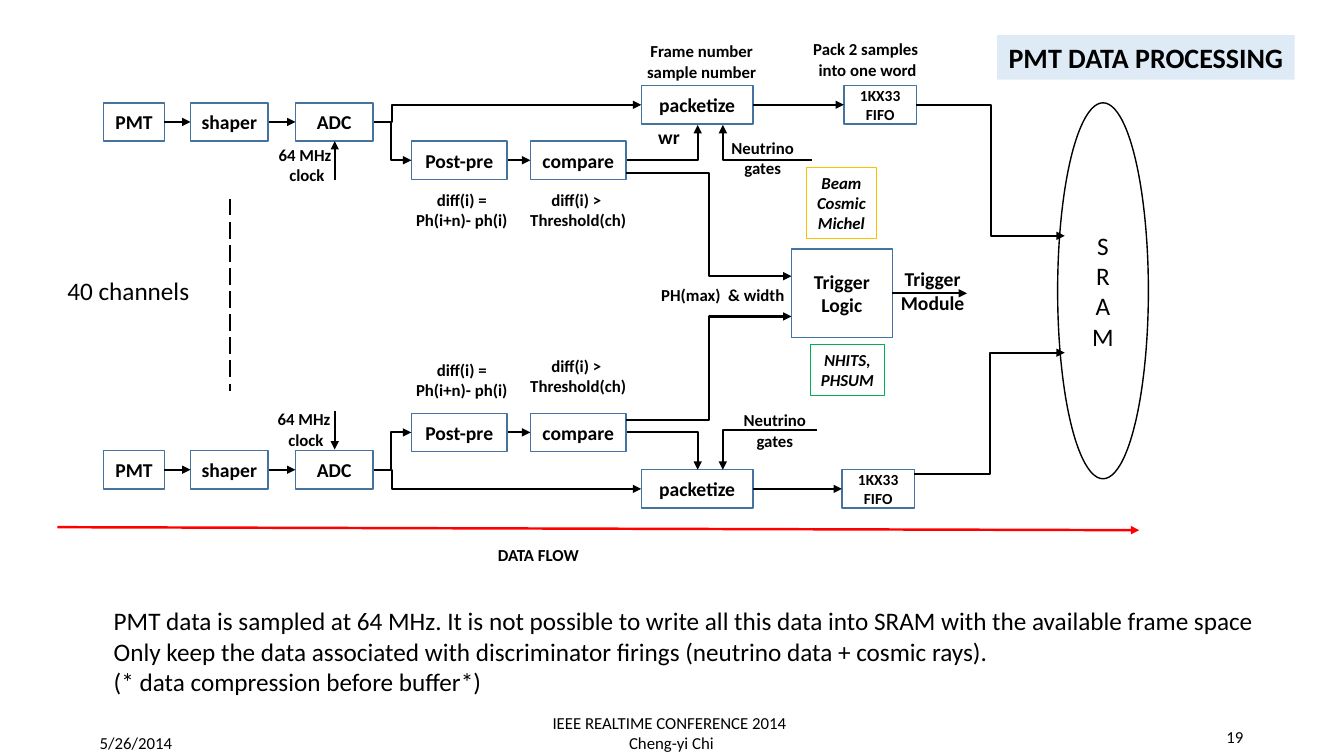
from dataclasses import dataclass
from typing import Optional

from lxml import etree
from pptx import Presentation
from pptx.dml.color import RGBColor
from pptx.enum.dml import MSO_LINE
from pptx.enum.shapes import MSO_CONNECTOR, MSO_SHAPE
from pptx.enum.text import MSO_ANCHOR, PP_ALIGN
from pptx.oxml.ns import qn
from pptx.util import Inches, Pt

RECT, ELLIPSE = MSO_SHAPE.RECTANGLE, MSO_SHAPE.OVAL
STRAIGHT, ELBOW = MSO_CONNECTOR.STRAIGHT, MSO_CONNECTOR.ELBOW
LEFT, CENTER, RIGHT = PP_ALIGN.LEFT, PP_ALIGN.CENTER, PP_ALIGN.RIGHT
TOP, MIDDLE = MSO_ANCHOR.TOP, MSO_ANCHOR.MIDDLE
LONG_DASH = MSO_LINE.LONG_DASH

BLACK = RGBColor(0x00, 0x00, 0x00)
WHITE = RGBColor(0xFF, 0xFF, 0xFF)
BLUE = RGBColor(0x43, 0x73, 0x9E)
PALE_BLUE = RGBColor(0xDE, 0xEB, 0xF7)
GREEN = RGBColor(0x00, 0xB0, 0x50)
GOLD = RGBColor(0xFF, 0xC0, 0x00)
RED = RGBColor(0xFF, 0x00, 0x00)

FONT = "Calibri"
BOX_H = 0.38


@dataclass
class Block:
    text: str
    x: float
    y: float
    w: float
    h: float = BOX_H
    size: float = 14
    bold: bool = True
    italic: bool = False
    line: Optional[RGBColor] = BLUE
    line_w: float = 1
    fill: Optional[RGBColor] = None
    shape: MSO_SHAPE = RECT
    anchor: MSO_ANCHOR = MIDDLE
    wrap: bool = True


@dataclass
class Label:
    text: str
    x: float
    y: float
    w: float
    h: float = 0.5
    size: float = 12
    bold: bool = True
    italic: bool = False
    align: PP_ALIGN = CENTER
    anchor: MSO_ANCHOR = TOP
    wrap: bool = False


@dataclass
class Wire:
    x1: float
    y1: float
    x2: float
    y2: float
    bend: Optional[float] = None  # share of the width; 1 turns a single corner
    color: RGBColor = BLACK
    width: float = 1.5
    dashed: bool = False


@dataclass
class Channel:
    """Heights of one processing chain."""
    adc: float
    post: float
    pack: float
    diff: float
    threshold: float
    clock_label: float
    clock_x: float
    clock_from: float
    clock_to: float
    to_trigger: float
    trigger_in: float
    pack_edge: float
    fifo_x: float
    fifo_out: float
    sram_in: float
    gates_x: float
    gates_y: float
    gate_line_x: float
    gate_line_y: float


def write(sp, item, align: PP_ALIGN) -> None:
    tf = sp.text_frame
    tf.text = item.text
    tf.word_wrap = item.wrap
    tf.vertical_anchor = item.anchor
    for p in tf.paragraphs:
        p.alignment = align
        p.font.name, p.font.size = FONT, Pt(item.size)
        p.font.bold, p.font.italic = item.bold, item.italic
        p.font.color.rgb = BLACK


def draw_block(s, b: Block) -> None:
    sp = s.shapes.add_shape(b.shape, Inches(b.x), Inches(b.y), Inches(b.w), Inches(b.h))
    sp.shadow.inherit = False
    if b.fill is None:
        sp.fill.background()
    else:
        sp.fill.solid()
        sp.fill.fore_color.rgb = b.fill
    if b.line is None:
        sp.line.fill.background()
    else:
        sp.line.color.rgb = b.line
        sp.line.width = Pt(b.line_w)
    write(sp, b, CENTER)


def draw_label(s, t: Label) -> None:
    sp = s.shapes.add_textbox(Inches(t.x), Inches(t.y), Inches(t.w), Inches(t.h))
    write(sp, t, t.align)


def draw_wire(s, w: Wire) -> None:
    kind = STRAIGHT if w.bend is None else ELBOW
    c = s.shapes.add_connector(kind, Inches(w.x1), Inches(w.y1), Inches(w.x2), Inches(w.y2))
    c.line.color.rgb = w.color
    c.line.width = Pt(w.width)
    sp_pr = c._element.spPr
    geom = sp_pr.find(qn("a:prstGeom"))
    if w.bend == 1:
        geom.set("prst", "bentConnector2")
    elif w.bend is not None:
        etree.SubElement(geom.find(qn("a:avLst")), qn("a:gd"),
                         name="adj1", fmla=f"val {round(w.bend * 100000)}")
    if w.dashed:
        c.line.dash_style = LONG_DASH
    else:
        etree.SubElement(sp_pr.find(qn("a:ln")), qn("a:tailEnd"), type="triangle")
    etree.SubElement(sp_pr, qn("a:effectLst"))


def draw_channel(s, ch: Channel) -> None:
    mid = BOX_H / 2
    adc, post, pack = ch.adc + mid, ch.post + mid, ch.pack + mid
    for b in (Block("PMT", 1.03, ch.adc, 0.6), Block("shaper", 1.89, ch.adc, 0.77),
              Block("ADC", 2.93, ch.adc, 0.77), Block("Post-pre", 4.08, ch.post, 0.95),
              Block("compare", 5.26, ch.post, 0.95), Block("packetize", 6.36, ch.pack, 1.11),
              Block("1KX33 FIFO", ch.fifo_x, ch.pack, 0.72, size=11)):
        draw_block(s, b)
    for t in (Label("diff(i) =\nPh(i+n)- ph(i)", 4.02, ch.diff, 1.12),
              Label("diff(i) > \nThreshold(ch)", 5.15, ch.threshold, 1.17),
              Label("64 MHz \nclock", ch.clock_x, ch.clock_label, 0.77),
              Label("Neutrino\ngates", ch.gates_x, ch.gates_y, 0.83)):
        draw_label(s, t)
    for w in (Wire(1.63, adc, 1.89, adc), Wire(2.67, adc, 2.93, adc),
              Wire(3.32, ch.clock_from, 3.32, ch.clock_to),
              Wire(3.71, adc, 4.08, post, 0.46), Wire(3.71, adc, 6.36, pack, 0.066),
              Wire(5.04, post, 5.26, post), Wire(6.22, post, 6.92, ch.pack_edge, 1),
              Wire(6.21, ch.to_trigger, 7.85, ch.trigger_in, 0.5),
              Wire(ch.gate_line_x, ch.gate_line_y, 7.17, ch.pack_edge, 1),
              Wire(7.47, pack, ch.fifo_x, pack),
              Wire(ch.fifo_x + 0.72, ch.fifo_out, 10.56, ch.sram_in, 0.5)):
        draw_wire(s, w)


CHANNELS = (
    Channel(adc=1.02, post=1.4, pack=0.85, diff=1.83, threshold=1.83,
            clock_label=1.39, clock_x=2.66, clock_from=1.79, clock_to=1.4,
            to_trigger=1.72, trigger_in=2.74, pack_edge=1.24, fifo_x=8.37,
            fifo_out=1.04, sram_in=2.34, gates_x=7.15, gates_y=1.32,
            gate_line_x=8.05, gate_line_y=1.59),
    Channel(adc=4.47, post=4.1, pack=4.66, diff=3.52, threshold=3.48,
            clock_label=4.01, clock_x=2.65, clock_from=4.08, clock_to=4.46,
            to_trigger=4.17, trigger_in=3.14, pack_edge=4.66, fifo_x=8.35,
            fifo_out=4.7, sram_in=3.5, gates_x=7.27, gates_y=4.02,
            gate_line_x=8.1, gate_line_y=4.27),
)

BLOCKS = (
    Block("Trigger Logic", 7.85, 2.47, 1, 0.88),
    Block("S\nR\nA\nM", 10.49, 1.02, 0.9, 3.73, size=18, bold=False, line=BLACK, shape=ELLIPSE),
    Block("NHITS,\nPHSUM", 8.04, 3.42, 0.73, 0.5, 12, italic=True, line=GREEN, line_w=0.75,
          wrap=False),
    Block("Beam\nCosmic\nMichel", 8, 1.66, 0.69, 0.71, 12, italic=True, line=GOLD, line_w=0.75,
          wrap=False),
    Block("PMT DATA PROCESSING", 9.89, 0.35, 2.95, 0.44, 20, line=None, fill=PALE_BLUE, wrap=False),
    Block("DATA FLOW", 4.83, 5.35, 1.02, 0.3, 12, line=None, fill=WHITE, wrap=False),
)

LABELS = (
    Label("Frame number\nsample number", 6.31, 0.36, 1.3),
    Label("Pack 2 samples \ninto one word", 7.96, 0.34, 1.29),
    Label("wr", 6.43, 1.19, 0.42, 0.34, 14, align=LEFT),
    Label("PH(max)  & width", 6.46, 2.78, 1.44, 0.3, align=LEFT),
    Label("Trigger\nModule", 8.83, 2.6, 0.84, 0.57, 14),
    Label("40 channels", 0.57, 2.68, 1.43, 0.4, 18, False, align=LEFT),
    Label("PMT data is sampled at 64 MHz. It is not possible to write all this data into SRAM "
          "with the available frame space\n"
          "Only keep the data associated with discriminator firings (neutrino data + cosmic rays).\n"
          "(* data compression before buffer*)", 1.03, 5.96, 11.53, 1.01, 18, False, align=LEFT),
    # Footer
    Label("IEEE REALTIME CONFERENCE 2014 \nCheng-yi Chi", 4.41, 7.07, 4.5, 0.4, bold=False,
          anchor=MIDDLE, wrap=True),
    Label("19", 9.43, 7.11, 3, 0.4, bold=False, align=RIGHT, anchor=MIDDLE, wrap=True),
    Label("5/26/2014", 0.89, 7.17, 3, 0.4, bold=False, align=LEFT, anchor=MIDDLE, wrap=True),
)

WIRES = (
    Wire(8.85, 2.91, 9.59, 2.91),
    Wire(2.28, 1.97, 2.28, 3.88, dashed=True),
    Wire(0.57, 5.23, 11.3, 5.26, color=RED, width=1.75),
)


def main() -> None:
    prs = Presentation()
    prs.slide_width, prs.slide_height = Inches(13.33), Inches(7.5)
    s = prs.slides.add_slide(prs.slide_layouts[6])
    for ch in CHANNELS:
        draw_channel(s, ch)
    for b in BLOCKS:
        draw_block(s, b)
    for t in LABELS:
        draw_label(s, t)
    for w in WIRES:
        draw_wire(s, w)
    prs.save("out.pptx")


if __name__ == "__main__":
    main()
